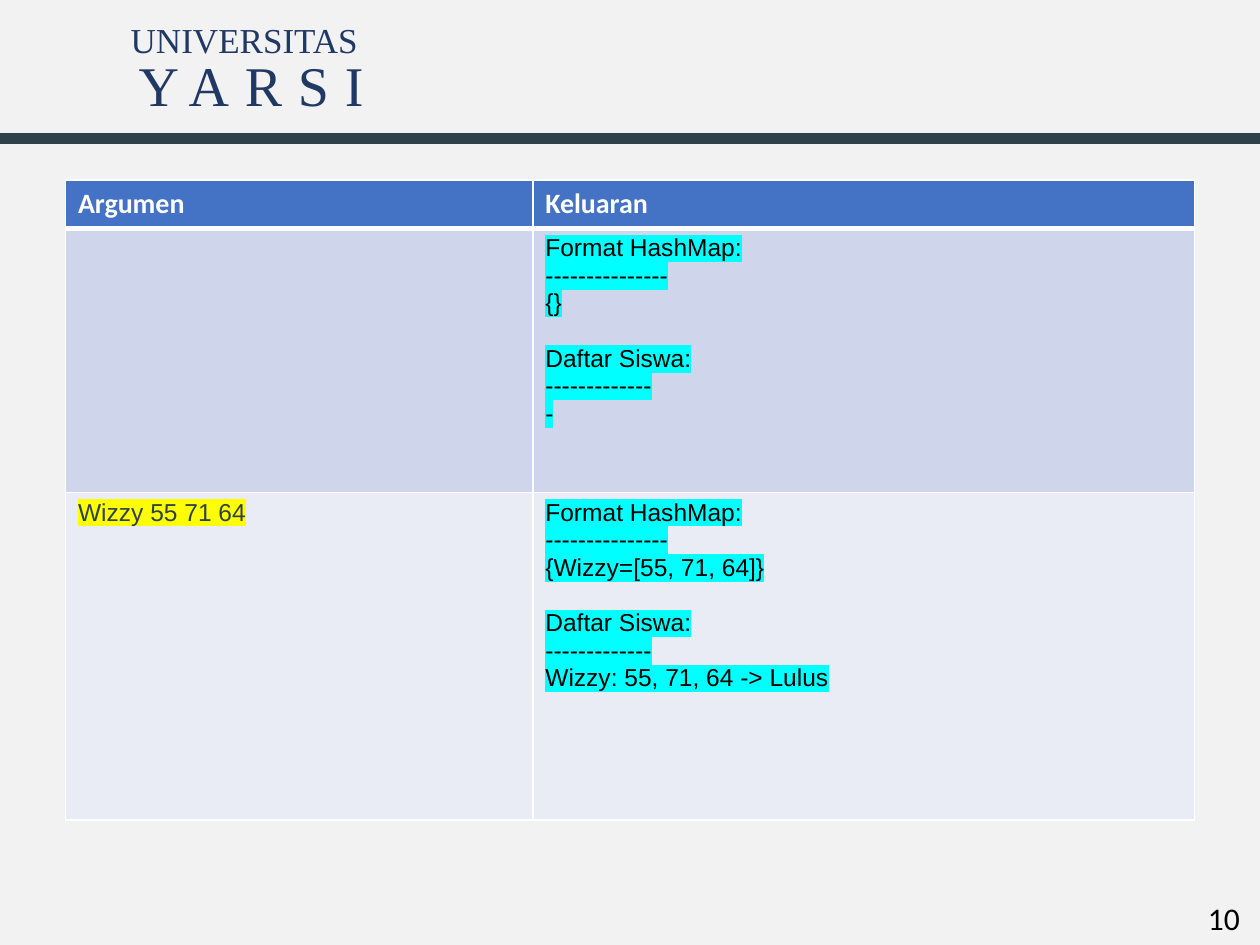
from dataclasses import dataclass
from lxml.etree import SubElement
from pptx import Presentation
from pptx.dml.color import RGBColor
from pptx.enum.text import MSO_AUTO_SIZE, PP_ALIGN
from pptx.oxml import parse_xml
from pptx.oxml.ns import nsdecls, qn
from pptx.util import Cm, Pt


@dataclass(frozen=True)
class Theme:
    back: str = "F2F2F2"
    rule: str = "2F424C"
    navy: str = "203864"
    head: str = "4472C4"
    bands: tuple = ("CFD5EA", "E9EBF5")
    white: str = "FFFFFF"
    black: str = "000000"
    cyan: str = "00FFFF"
    yellow: str = "FFFF00"
    sans: str = "Calibri"
    code: str = "Arial"
    serif: str = "Times New Roman"
    page_size: int = 18
    head_size: int = 16
    code_size: int = 14
    name_size: int = 20
    mark_size: int = 32


THEME = Theme()


def rgb(code):
    return RGBColor.from_string(code)


def add_run(para, text, face, size, color, bold=False, glow=None, track=0):
    run = para.add_run()
    run.text = text
    font = run.font
    font.name, font.size, font.bold = face, Pt(size), bold
    font.color.rgb = rgb(color)
    props = run._r.get_or_add_rPr()
    if track:
        props.set("spc", str(track * 100))
    if glow:
        mark = parse_xml(f'<a:highlight {nsdecls("a")}><a:srgbClr val="{glow}"/></a:highlight>')
        props.find(qn("a:solidFill")).addnext(mark)


def add_label(shapes, box, text, face, size, color, align=PP_ALIGN.LEFT, track=0):
    frame = shapes.add_textbox(*map(Cm, box)).text_frame
    frame.word_wrap = False
    frame.auto_size = MSO_AUTO_SIZE.SHAPE_TO_FIT_TEXT
    para = frame.paragraphs[0]
    para.alignment = align
    add_run(para, text, face, size, color, track=track)


def add_rule(slide, top, width):
    line = slide.shapes.add_connector(1, 0, Cm(top), Cm(width), Cm(top))
    line.line.color.rgb = rgb(THEME.rule)
    line.line.width = Pt(6)
    SubElement(line._element.spPr, qn("a:effectLst"))


def style_cell(cell, fill, top=1, base=1):
    cell.fill.solid()
    cell.fill.fore_color.rgb = rgb(fill)
    props = cell._tc.get_or_add_tcPr()
    # Borders come before the fill, in schema order
    for spot, (side, width) in enumerate((("L", 1), ("R", 1), ("T", top), ("B", base))):
        props.insert(spot, parse_xml(
            f'<a:ln{side} {nsdecls("a")} w="{Pt(width)}"><a:solidFill>'
            f'<a:srgbClr val="{THEME.white}"/></a:solidFill></a:ln{side}>'))


def fill_code(cell, blocks, color, glow):
    """Write blocks of lines, with a gap of one line between blocks."""
    frame = cell.text_frame
    first = True
    for block in blocks:
        for spot, text in enumerate(block):
            para = frame.paragraphs[0] if first else frame.add_paragraph()
            if spot == 0 and not first:
                para.space_before = Pt(16)
            add_run(para, text, THEME.code, THEME.code_size, color, glow=glow)
            first = False


def add_grid(slide, heads, cases):
    widths, heights = (9.42, 13.34), (0.97, 5.33, 6.6)
    grid = slide.shapes.add_table(
        len(heights), len(widths), Cm(1.32), Cm(3.63),
        Cm(sum(widths)), Cm(sum(heights))).table
    for col, width in zip(grid.columns, widths):
        col.width = Cm(width)
    for row, height in zip(grid.rows, heights):
        row.height = Cm(height)
    # Header
    for spot, text in enumerate(heads):
        cell = grid.cell(0, spot)
        style_cell(cell, THEME.head, base=3)
        add_run(cell.text_frame.paragraphs[0], text, THEME.sans,
                THEME.head_size, THEME.white, bold=True)
    # Argument and output of each case
    for row, (args, state, pupils) in enumerate(cases, 1):
        left, right = grid.cell(row, 0), grid.cell(row, 1)
        for cell in (left, right):
            style_cell(cell, THEME.bands[row - 1], top=3 if row == 1 else 1)
        if args:
            fill_code(left, [[args]], THEME.rule, THEME.yellow)
        blocks = [["Format HashMap:", "-" * 15, state],
                  ["Daftar Siswa:", "-" * 13, pupils]]
        fill_code(right, blocks, THEME.black, THEME.cyan)


def main():
    deck = Presentation()
    deck.slide_width, deck.slide_height = Cm(25.4), Cm(19.05)
    slide = deck.slides.add_slide(deck.slide_layouts[6])
    slide.background.fill.solid()
    slide.background.fill.fore_color.rgb = rgb(THEME.back)

    # Page number
    add_label(slide.shapes, (24.1, 18, 1.27, 1.02), "10",
              THEME.sans, THEME.page_size, THEME.black)

    # University name and rule
    name = slide.shapes.add_group_shape().shapes
    add_label(name, (2.36, 0.25, 5.13, 1.12), "UNIVERSITAS", THEME.serif,
              THEME.name_size, THEME.navy, PP_ALIGN.CENTER)
    add_label(name, (2.36, 0.89, 5.41, 1.63), "YARSI", THEME.serif,
              THEME.mark_size, THEME.navy, PP_ALIGN.CENTER, track=9)
    add_rule(slide, 2.79, 25.4)

    # Test cases
    add_grid(slide, ("Argumen", "Keluaran"), (
        ("", "{}", "-"),
        ("Wizzy 55 71 64", "{Wizzy=[55, 71, 64]}", "Wizzy: 55, 71, 64 -> Lulus"),
    ))
    deck.save("out.pptx")


if __name__ == "__main__":
    main()
